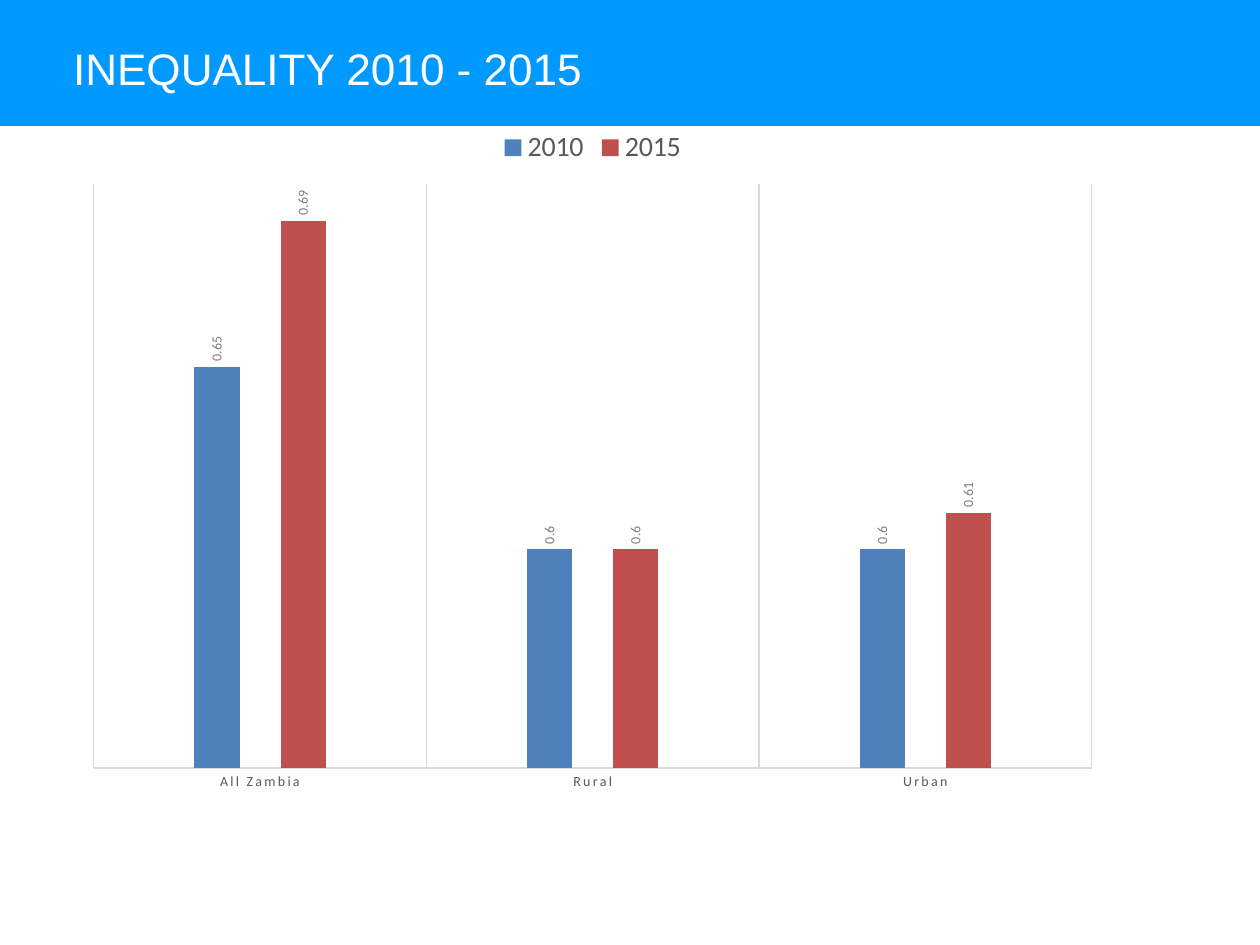
from pptx import Presentation
from pptx.chart.data import CategoryChartData
from pptx.dml.color import RGBColor
from pptx.enum.chart import XL_CHART_TYPE, XL_LABEL_POSITION, XL_LEGEND_POSITION, XL_TICK_MARK
from pptx.enum.shapes import MSO_SHAPE
from pptx.enum.text import MSO_ANCHOR, MSO_AUTO_SIZE, PP_ALIGN
from pptx.util import Inches, Pt

BAND_BLUE = RGBColor(0x00, 0x99, 0xFF)
WHITE = RGBColor(0xFF, 0xFF, 0xFF)
BLACK = RGBColor(0x00, 0x00, 0x00)
DARK_GREY = RGBColor(0x59, 0x59, 0x59)
LABEL_GREY = RGBColor(0x80, 0x80, 0x80)
LINE_GREY = RGBColor(0xD9, 0xD9, 0xD9)
BLUE = RGBColor(0x4F, 0x81, 0xBD)
RED = RGBColor(0xC0, 0x50, 0x4D)

CATEGORIES = ["All Zambia", "Rural", "Urban"]
SERIES = [("2010", [0.65, 0.6, 0.6], BLUE), ("2015", [0.69, 0.6, 0.61], RED)]


def set_font(font, name, size, color):
    """Give a font its name, size and colour."""
    font.name = name
    font.size = Pt(size)
    font.color.rgb = color


def set_line(line):
    """Draw an axis line or gridline in thin grey."""
    line.color.rgb = LINE_GREY
    line.width = Pt(0.75)


def add_header(page, left, top, width, height):
    """Place the blue band and the slide title on it."""
    band = page.shapes.add_shape(MSO_SHAPE.RECTANGLE, left, top, width, height)
    band.shadow.inherit = False
    band.fill.solid()
    band.fill.fore_color.rgb = BAND_BLUE
    band.line.fill.background()

    title = page.shapes.title
    title.element.addprevious(band.element)
    title.left, title.top = left + Inches(0.49), top + Inches(0.26)
    title.width, title.height = Inches(7.53), Inches(0.55)
    frame = title.text_frame
    frame.text = "INEQUALITY 2010 - 2015"
    frame.auto_size = MSO_AUTO_SIZE.NONE
    frame.vertical_anchor = MSO_ANCHOR.MIDDLE
    paragraph = frame.paragraphs[0]
    paragraph.alignment = PP_ALIGN.LEFT
    set_font(paragraph.runs[0].font, "Arial", 25.2, WHITE)


def format_axes(chart):
    """Hide the value axis and style the category axis."""
    value_axis = chart.value_axis
    value_axis.minimum_scale = 0.54
    value_axis.maximum_scale = 0.7
    value_axis.has_major_gridlines = False
    value_axis.visible = False

    category_axis = chart.category_axis
    category_axis.major_tick_mark = XL_TICK_MARK.NONE
    category_axis.has_major_gridlines = True
    set_line(category_axis.major_gridlines.format.line)
    set_line(category_axis.format.line)
    set_font(category_axis.tick_labels.font, "Calibri", 8, DARK_GREY)
    for properties in chart.element.xpath(".//c:catAx/c:txPr//a:defRPr"):
        properties.set("spc", "120")


def format_series(chart):
    """Colour the columns and turn their value labels upright."""
    plot = chart.plots[0]
    plot.gap_width = 444
    plot.overlap = -90
    plot.vary_by_categories = False
    for series, (_, _, color) in zip(plot.series, SERIES):
        series.format.fill.solid()
        series.format.fill.fore_color.rgb = color
        labels = series.data_labels
        labels.show_value = True
        labels.position = XL_LABEL_POSITION.OUTSIDE_END
        set_font(labels.font, "Calibri", 8, LABEL_GREY)
    for body in chart.element.xpath(".//c:dLbls/c:txPr/a:bodyPr"):
        body.set("rot", "-5400000")
        body.set("vert", "horz")


def add_inequality_chart(page, left, top, width, height):
    """Place the clustered column chart of both years."""
    data = CategoryChartData()
    data.categories = CATEGORIES
    for name, values, _ in SERIES:
        data.add_series(name, values)
    chart = page.shapes.add_chart(
        XL_CHART_TYPE.COLUMN_CLUSTERED, left, top, width, height, data
    ).chart
    set_font(chart.font, "Calibri", 10, BLACK)
    chart.has_title = False
    chart.has_legend = True
    chart.legend.position = XL_LEGEND_POSITION.TOP
    chart.legend.include_in_layout = False
    set_font(chart.legend.font, "Calibri", 16, DARK_GREY)
    format_axes(chart)
    format_series(chart)


def main():
    """Build the deck and save it."""
    deck = Presentation()
    deck.slide_width, deck.slide_height = Inches(10), Inches(7.5)
    page = deck.slides.add_slide(deck.slide_layouts[5])
    add_header(page, Inches(-0.01), Inches(0), Inches(10.01), Inches(1))
    add_inequality_chart(page, Inches(0.58), Inches(0.92), Inches(8.25), Inches(5.46))
    deck.save("out.pptx")


if __name__ == "__main__":
    main()
